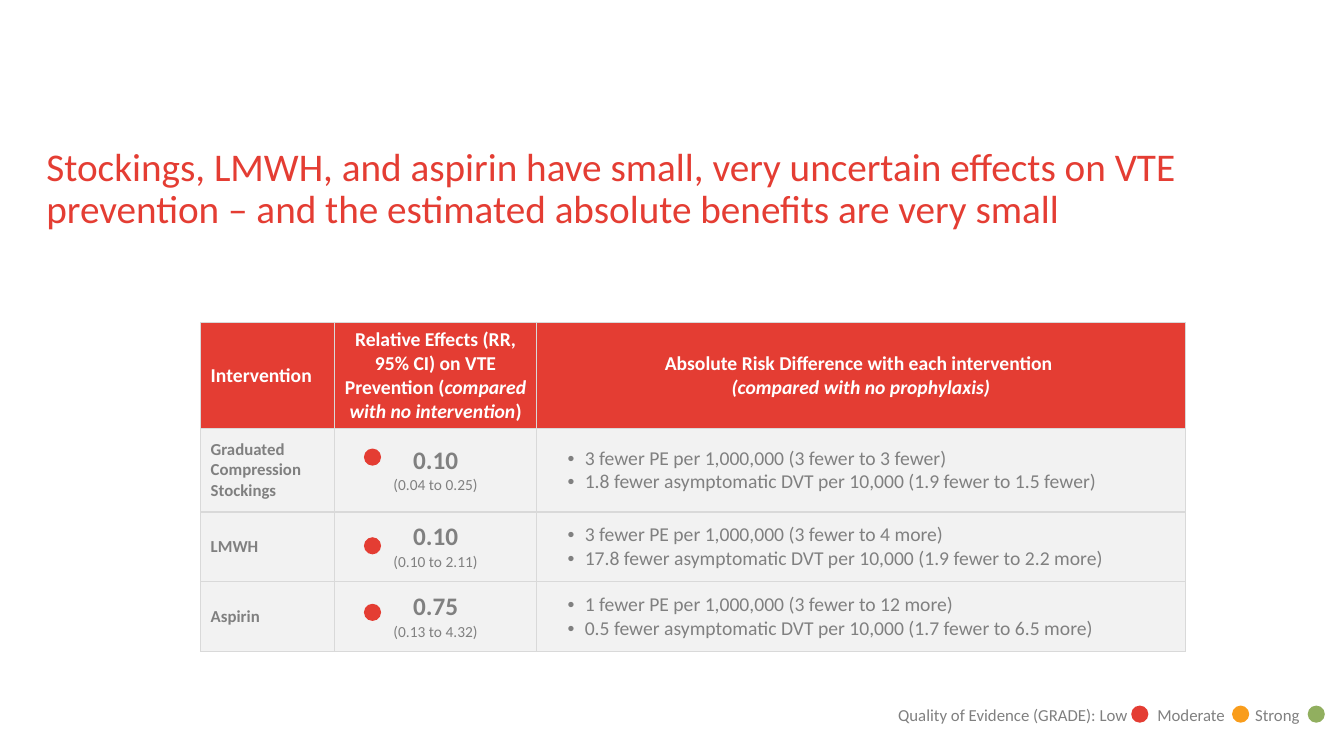
from dataclasses import dataclass

from lxml.etree import SubElement as Sub
from pptx import Presentation
from pptx.dml.color import RGBColor as RGB
from pptx.enum.shapes import MSO_SHAPE as Shape
from pptx.enum.text import MSO_ANCHOR as Anchor, PP_ALIGN as Align
from pptx.oxml import parse_xml
from pptx.oxml.ns import nsdecls, qn
from pptx.util import Inches, Pt


@dataclass(frozen=True)
class Theme:
    font: str = "Calibri"
    red: str = "E43D33"
    amber: str = "F99D1C"
    green: str = "91AF5F"
    gray: str = "808080"
    pale: str = "F2F2F2"
    rule: str = "D9D9D9"
    white: str = "FFFFFF"
    title: int = 28
    ratio: int = 18
    body: int = 14
    label: int = 12
    range: int = 11


THEME = Theme()

# Each header is a list of lines; each line is a list of (text, italic) runs
HEADS = [
    [[("Intervention", False)]],
    [[("Relative Effects (RR, 95% CI) on VTE Prevention (", False),
      ("compared with no intervention", True), (")", False)]],
    [[("Absolute Risk Difference with each intervention ", False)],
     [("(compared with no prophylaxis)", True)]],
]

# Intervention, ratio, interval, absolute effects
ROWS = [
    ("Graduated Compression Stockings", "0.10", "(0.04 to 0.25)",
     ["3 fewer PE per 1,000,000 (3 fewer to 3 fewer)",
      "1.8 fewer asymptomatic DVT per 10,000 (1.9 fewer to 1.5 fewer)"]),
    ("LMWH", "0.10", "(0.10 to 2.11)",
     ["3 fewer PE per 1,000,000 (3 fewer to 4 more)",
      "17.8 fewer asymptomatic DVT per 10,000 (1.9 fewer to 2.2 more)"]),
    ("Aspirin", "0.75", "(0.13 to 4.32)",
     ["1 fewer PE per 1,000,000 (3 fewer to 12 more)",
      "0.5 fewer asymptomatic DVT per 10,000 (1.7 fewer to 6.5 more)"]),
]


def style(para, size, color, bold=False, align=Align.LEFT):
    para.alignment = align
    font = para.font
    font.name, font.size, font.bold = THEME.font, Pt(size), bold
    font.color.rgb = RGB.from_string(color)


def add_box(slide, left, top, width, height):
    frame = slide.shapes.add_textbox(
        Inches(left), Inches(top), Inches(width), Inches(height)).text_frame
    frame.word_wrap = True
    return frame


def add_dot(slide, left, top, color):
    dot = slide.shapes.add_shape(
        Shape.OVAL, Inches(left), Inches(top), Inches(0.17), Inches(0.17))
    dot.shadow.inherit = False
    dot.fill.solid()
    dot.fill.fore_color.rgb = RGB.from_string(color)
    dot.line.fill.background()


def add_bullet(para):
    props = para._p.get_or_add_pPr()
    props.set("marL", str(Inches(0.38)))
    props.set("indent", str(Inches(-0.17)))
    Sub(props, qn("a:buFont")).set("typeface", "Arial")
    Sub(props, qn("a:buChar")).set("char", "•")


def add_tabs(para, stops):
    tabs = Sub(para._p.get_or_add_pPr(), qn("a:tabLst"))
    for stop in stops:
        tab = Sub(tabs, qn("a:tab"))
        tab.set("pos", str(Inches(stop)))
        tab.set("algn", "l")


def dress(cell, color):
    """Fill a cell, centre it vertically and rule all four sides."""
    cell.vertical_anchor = Anchor.MIDDLE
    cell.fill.solid()
    cell.fill.fore_color.rgb = RGB.from_string(color)
    for i, side in enumerate("LRTB"):
        cell._tc.tcPr.insert(i, parse_xml(
            f'<a:ln{side} {nsdecls("a")} w="{Pt(1)}"><a:solidFill>'
            f'<a:srgbClr val="{THEME.rule}"/></a:solidFill></a:ln{side}>'))


def fill_head(cell, lines, align):
    dress(cell, THEME.red)
    para = cell.text_frame.paragraphs[0]
    style(para, THEME.body, THEME.white, True, align)
    for i, line in enumerate(lines):
        if i:
            para.add_line_break()
        for text, slant in line:
            run = para.add_run()
            run.text = text
            run.font.italic = slant


def fill_cell(cell, lines, align=Align.LEFT, bullet=False):
    """Write (text, size, bold) lines, one paragraph each."""
    dress(cell, THEME.pale)
    frame = cell.text_frame
    for i, (text, size, bold) in enumerate(lines):
        para = frame.add_paragraph() if i else frame.paragraphs[0]
        para.text = text
        if bullet:
            add_bullet(para)
        style(para, size, THEME.gray, bold, align)


def add_title(slide, text):
    frame = add_box(slide, 0.46, 1.46, 12, 1.32)
    frame.margin_left = frame.margin_right = 0
    frame.margin_top = frame.margin_bottom = 0
    para = frame.paragraphs[0]
    para.text = text
    para.line_spacing = 0.9
    style(para, THEME.title, THEME.red)


def add_grid(slide):
    widths, heights = [1.33, 2, 6.44], [1.05, 0.83, 0.69, 0.69]
    grid = slide.shapes.add_table(
        len(heights), len(widths), Inches(1.99), Inches(3.2),
        Inches(sum(widths)), Inches(sum(heights))).table
    grid.horz_banding = False
    for col, width in zip(grid.columns, widths):
        col.width = Inches(width)
    for row, height in zip(grid.rows, heights):
        row.height = Inches(height)
    for i, lines in enumerate(HEADS):
        fill_head(grid.cell(0, i), lines, Align.CENTER if i else Align.LEFT)
    for i, (name, ratio, span, effects) in enumerate(ROWS, 1):
        fill_cell(grid.cell(i, 0), [(name, THEME.label, True)])
        fill_cell(grid.cell(i, 1), [(ratio, THEME.ratio, True),
                                    (span, THEME.range, False)], Align.CENTER)
        fill_cell(grid.cell(i, 2), [(text, THEME.body, False)
                                    for text in effects], bullet=True)


def add_legend(slide):
    para = add_box(slide, 8.81, 6.94, 4.53, 0.3).paragraphs[0]
    para.text = "Quality of Evidence (GRADE): Low\tModerate\tStrong"
    add_tabs(para, [2.57, 3.54])
    style(para, THEME.label, THEME.gray)
    for left, color in [(11.22, THEME.red), (12.22, THEME.amber),
                        (12.97, THEME.green)]:
        add_dot(slide, left, 7, color)


def main():
    deck = Presentation()
    deck.slide_width, deck.slide_height = Inches(13.33), Inches(7.5)
    slide = deck.slides.add_slide(deck.slide_layouts[6])

    # Headline
    add_title(slide, "Stockings, LMWH, and aspirin have small, very uncertain "
              "effects on VTE prevention – and the estimated absolute "
              "benefits are very small")

    # Results with evidence ratings
    add_grid(slide)
    for top in (4.45, 5.33, 5.99):
        add_dot(slide, 3.61, top, THEME.red)

    # Rating key
    add_legend(slide)
    deck.save("out.pptx")


if __name__ == "__main__":
    main()
